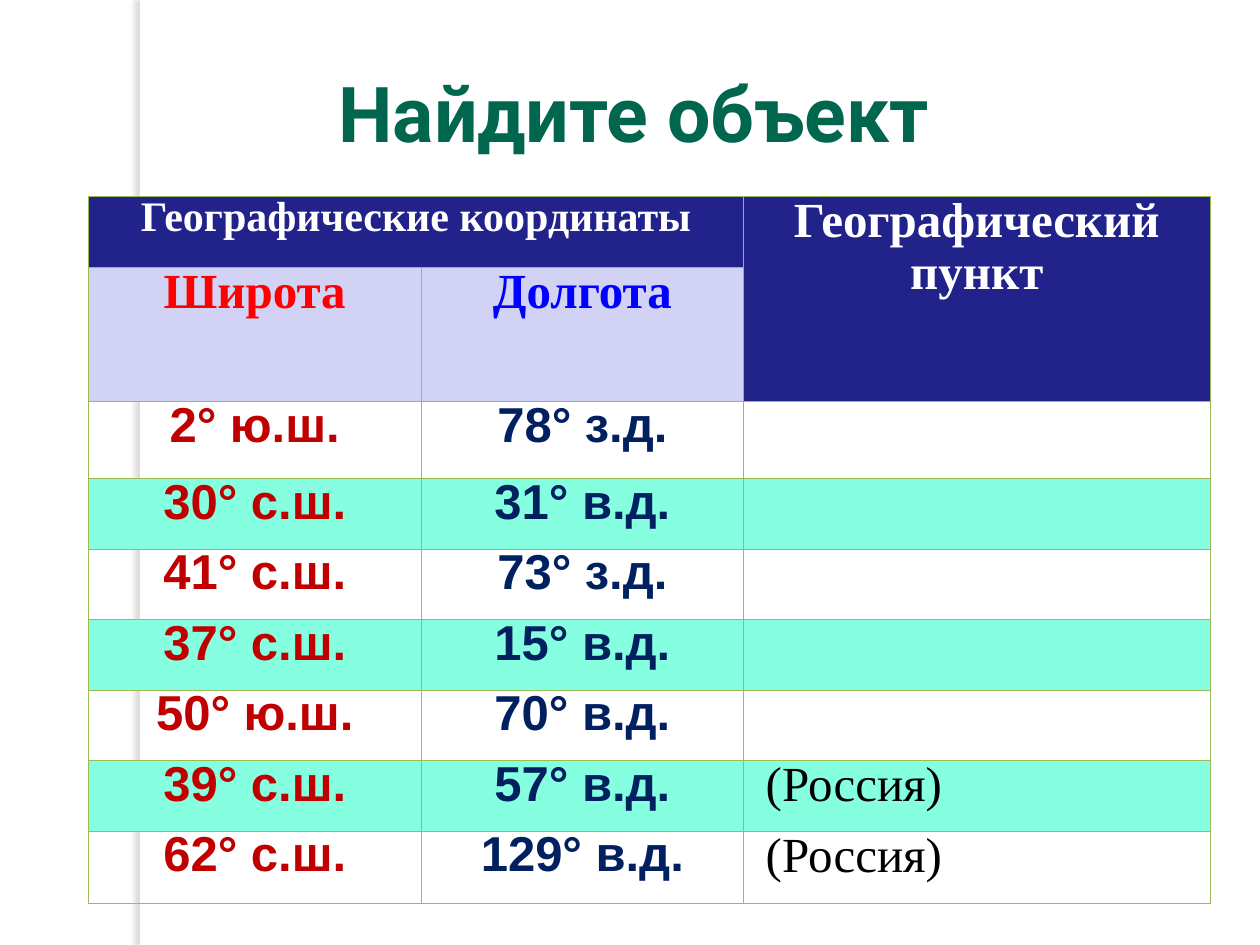
from lxml.etree import SubElement
from pptx import Presentation
from pptx.dml.color import RGBColor
from pptx.enum.shapes import MSO_SHAPE as Shape
from pptx.enum.text import MSO_ANCHOR as Anchor, PP_ALIGN as Align
from pptx.oxml.ns import qn
from pptx.util import Cm, Pt

WHITE = RGBColor(0xFF, 0xFF, 0xFF)
BLACK = RGBColor(0x00, 0x00, 0x00)
GREEN = RGBColor(0x00, 0x66, 0x4D)
NAVY = RGBColor(0x22, 0x22, 0x8B)
LAVENDER = RGBColor(0xD2, 0xD2, 0xF4)
MINT = RGBColor(0x85, 0xFF, 0xE0)
RED = RGBColor(0xFF, 0x00, 0x00)
BLUE = RGBColor(0x00, 0x00, 0xFF)
DARK_RED = RGBColor(0xC0, 0x00, 0x00)
DARK_BLUE = RGBColor(0x00, 0x20, 0x60)
BORDER = RGBColor(0x9B, 0xBB, 0x59)
SHADOW = RGBColor(0x73, 0x6F, 0x63)

SERIF, SANS, TITLE_FONT = "Times New Roman", "Arial", "Roboto"

COLUMN_WIDTHS = [6.71, 6.5, 9.4]
ROW_HEIGHTS = [1.42, 2.72, 1.55] + [1.42] * 5 + [1.47]
COORDINATES = [
    ("2° ю.ш.", "78° з.д.", ""),
    ("30° с.ш.", "31° в.д.", ""),
    ("41° с.ш.", "73° з.д.", ""),
    ("37° с.ш.", "15° в.д.", ""),
    ("50° ю.ш.", "70° в.д.", ""),
    ("39° с.ш.", "57° в.д.", " (Россия)"),
    ("62° с.ш.", "129° в.д.", " (Россия)"),
]


class SlideBuilder:
    def __init__(self, slide):
        self.slide = slide

    def style(self, paragraph, text, size, font, color, bold=True, align=Align.CENTER):
        paragraph.text = text
        paragraph.alignment = align
        paragraph.font.size = Pt(size)
        paragraph.font.name = font
        paragraph.font.bold = bold
        paragraph.font.color.rgb = color

    def title(self, text, left, top, width, height):
        box = self.slide.shapes.add_textbox(Cm(left), Cm(top), Cm(width), Cm(height))
        frame = box.text_frame
        frame.word_wrap = True
        frame.vertical_anchor = Anchor.MIDDLE
        self.style(frame.paragraphs[0], text, 44, TITLE_FONT, GREEN)

    def shadowed_strip(self, left, top, width, height):
        shape = self.slide.shapes.add_shape(
            Shape.RECTANGLE, Cm(left), Cm(top), Cm(width), Cm(height))
        shape.fill.solid()
        shape.fill.fore_color.rgb = WHITE
        shape.line.fill.background()
        shape.shadow.inherit = False
        effects = shape._element.spPr.find(qn("a:effectLst"))
        shadow = SubElement(effects, qn("a:outerShdw"), blurRad=str(Pt(3)),
                            dist=str(Pt(3)), dir="10800000", rotWithShape="0")
        color = SubElement(shadow, qn("a:srgbClr"), val=str(SHADOW))
        SubElement(color, qn("a:alpha"), val="25000")

    def table(self, left, top, widths, heights):
        frame = self.slide.shapes.add_table(
            len(heights), len(widths), Cm(left), Cm(top), Cm(sum(widths)), Cm(sum(heights)))
        table = frame.table
        table.first_row = table.horz_banding = False
        for column, width in zip(table.columns, widths):
            column.width = Cm(width)
        for row, height in zip(table.rows, heights):
            row.height = Cm(height)
            for cell in row.cells:
                self.border(cell)
                cell.fill.background()
        return table

    def border(self, cell):
        properties = cell._tc.get_or_add_tcPr()
        for side in ("a:lnL", "a:lnR", "a:lnT", "a:lnB"):
            line = SubElement(properties, qn(side), w=str(Pt(0.45)))
            fill = SubElement(line, qn("a:solidFill"))
            SubElement(fill, qn("a:srgbClr"), val=str(BORDER))

    def cell(self, cell, text, color, fill=None, size=28, font=SERIF, spacing=0.95, **options):
        if fill is not None:
            cell.fill.solid()
            cell.fill.fore_color.rgb = fill
        if text:
            cell.margin_left = cell.margin_right = Cm(0.2)
            cell.margin_top = cell.margin_bottom = 0
            paragraph = cell.text_frame.paragraphs[0]
            self.style(paragraph, text, size, font, color, **options)
            paragraph.line_spacing = spacing


def main():
    presentation = Presentation()
    presentation.slide_width, presentation.slide_height = Cm(25.4), Cm(19.05)
    builder = SlideBuilder(presentation.slides.add_slide(presentation.slide_layouts[6]))

    builder.shadowed_strip(2.82, 0, 0.2, 19.05)
    table = builder.table(1.78, 3.96, COLUMN_WIDTHS, ROW_HEIGHTS)
    table.cell(0, 0).merge(table.cell(0, 1))
    table.cell(0, 2).merge(table.cell(1, 2))
    builder.cell(table.cell(0, 0), "Географические координаты", WHITE, NAVY, size=24)
    builder.cell(table.cell(0, 2), "Географический пункт", WHITE, NAVY)
    builder.cell(table.cell(1, 0), "Широта", RED, LAVENDER)
    builder.cell(table.cell(1, 1), "Долгота", BLUE, LAVENDER)

    for index, (latitude, longitude, place) in enumerate(COORDINATES):
        row = index + 2
        fill = MINT if index % 2 else None
        for column, text, color in ((0, latitude, DARK_RED), (1, longitude, DARK_BLUE)):
            builder.cell(table.cell(row, column), text, color, fill, font=SANS, spacing=0.93)
        builder.cell(table.cell(row, 2), place, BLACK, fill, bold=False, align=Align.LEFT)

    builder.title("Найдите объект", 1.57, 0.99, 22.43, 2.54)
    presentation.save("out.pptx")


if __name__ == "__main__":
    main()
